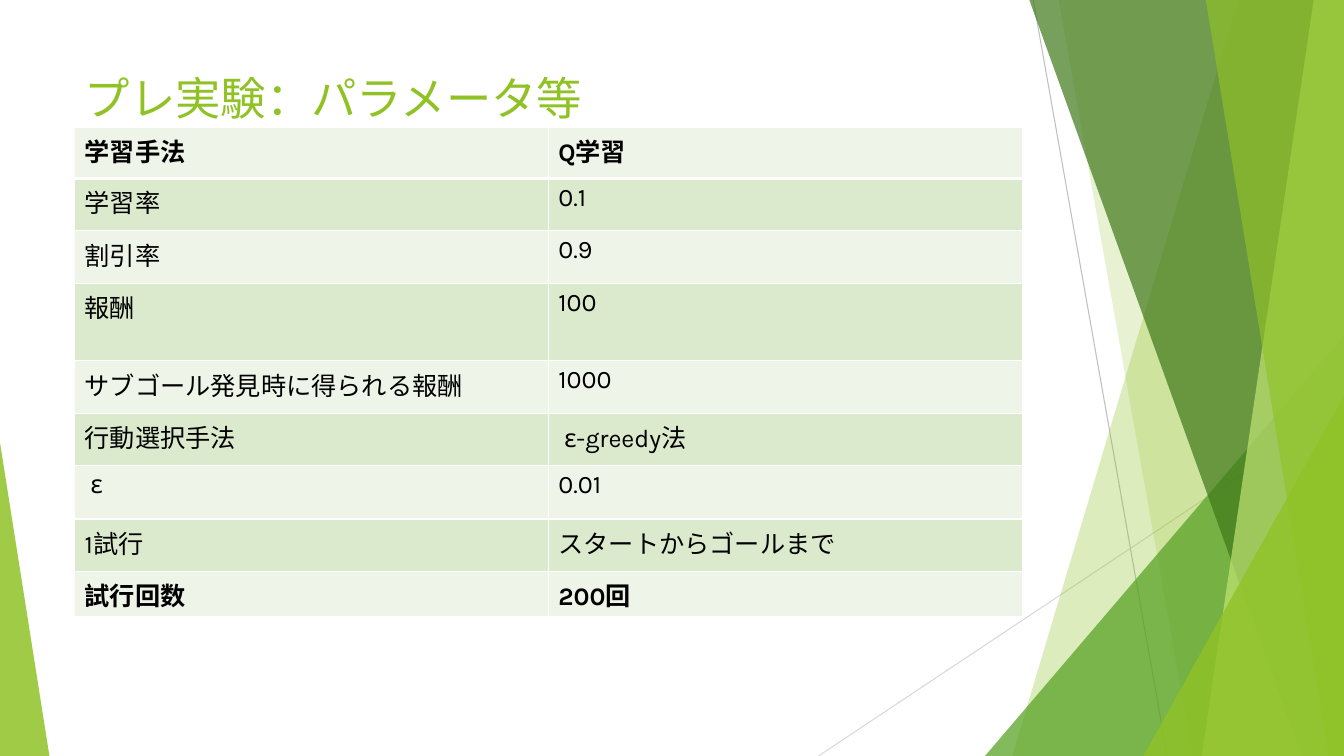
import pptx
import pptx.util
import pptx.dml.color
import pptx.enum.shapes
import pptx.enum.text
import pptx.oxml
import pptx.oxml.ns

RGB = pptx.dml.color.RGBColor
LIME = RGB(0x90, 0xC2, 0x26)
PALE_LIME = RGB(0xC0, 0xE4, 0x74)
GREEN = RGB(0x54, 0xA0, 0x21)
DARK_GREEN = RGB(0x3F, 0x78, 0x19)
GREY = RGB(0xBF, 0xBF, 0xBF)
LIGHT_GREY = RGB(0xD9, 0xD9, 0xD9)
BLACK = RGB(0, 0, 0)
ROW_FILLS = [RGB(0xEE, 0xF4, 0xE8), RGB(0xDB, 0xE9, 0xCD)]
FONT = "Karla"
NS = pptx.oxml.ns.nsdecls("a")
Pt = pptx.util.Pt

prs = pptx.Presentation()
prs.slide_width = pptx.util.Inches(13.33)
prs.slide_height = pptx.util.Inches(7.5)
s = prs.slides.add_slide(prs.slide_layouts[5])


# The slide is a grid of 100 columns by 100 rows
def grid(*cells):
    sizes = (prs.slide_width, prs.slide_height)
    return [int(sizes[i % 2] * c / 100) for i, c in enumerate(cells)]


def write(p, text, size, color, bold=False):
    r = p.add_run()
    r.text = text
    r.font.name = FONT
    r.font.size = Pt(size)
    r.font.bold = bold
    r.font.color.rgb = color


# Thin crossing lines
for ends, color in [((76.88, 0, 86.85, 100), GREY),
                    ((100, 53.73, 60.9, 100), LIGHT_GREY)]:
    line = s.shapes.add_connector(
        pptx.enum.shapes.MSO_CONNECTOR.STRAIGHT, *grid(*ends))
    line.line.color.rgb = color
    line.line.width = Pt(0.75)
    line._element.spPr.append(pptx.oxml.parse_xml(f"<a:effectLst {NS}/>"))

# Translucent facets, back to front. A band runs from its top column to its
# bottom column and out to the right edge; a triangle has a box and an apex.
facets = [
    ("band", (92.12, 75.32), LIME, 30),
    ("band", (78.77, 88.75), LIME, 20),
    ("triangle", (73.29, 44.4, 26.71, 55.6, 1), GREEN, 72),
    ("band", (76.59, 96.85), DARK_GREEN, 70),
    ("band", (97.75, 89.42), PALE_LIME, 70),
    ("band", (89.72, 98.87), LIME, 65),
    ("triangle", (85.07, 52.4, 14.93, 47.6, 1), LIME, 80),
    ("triangle", (0, 58.53, 3.68, 41.47, 0), LIME, 85),
]
for kind, place, color, opacity in facets:
    if kind == "band":
        top, bottom = place
        outline = s.shapes.build_freeform(*grid(top, 0))
        outline.add_line_segments(
            [grid(100, 0), grid(100, 100), grid(bottom, 100)], close=True)
        sp = outline.convert_to_shape()
    else:
        sp = s.shapes.add_shape(
            pptx.enum.shapes.MSO_SHAPE.ISOSCELES_TRIANGLE, *grid(*place[:4]))
        sp.adjustments[0] = place[4]
    sp.shadow.inherit = False
    sp.line.fill.background()
    sp.fill.solid()
    sp.fill.fore_color.rgb = color
    tint = sp._element.spPr.find(".//" + pptx.oxml.ns.qn("a:srgbClr"))
    tint.append(pptx.oxml.parse_xml(f'<a:alpha {NS} val="{opacity * 1000}"/>'))

# Title
title = s.shapes.title
title.left, title.top, title.width, title.height = grid(5.55, 8.93, 70.5, 7.87)
tf = title.text_frame
tf.word_wrap = True
tf.auto_size = pptx.enum.text.MSO_AUTO_SIZE.NONE
tf.vertical_anchor = pptx.enum.text.MSO_ANCHOR.MIDDLE
tf.paragraphs[0].alignment = pptx.enum.text.PP_ALIGN.LEFT
write(tf.paragraphs[0], "プレ実験：パラメータ等", 32.4, LIME)

# Parameter table and trial-count table: top row, then (height, label, value)
parameters = [
    (6.8, "学習手法", "Q学習"),
    (6.93, "学習率", "0.1"),
    (6.93, "割引率", "0.9"),
    (10.27, "報酬", "100"),
    (6.93, "サブゴール発見時に得られる報酬", "1000"),
    (6.93, "行動選択手法", " ε-greedy法"),
    (7.07, " ε", "0.01"),
    (6.93, "1試行", "スタートからゴールまで"),
]
trials = [(5.47, "試行回数", "200回")]

for top, rows in [(16.8, parameters), (75.6, trials)]:
    total = sum(row[0] for row in rows)
    table = s.shapes.add_table(
        len(rows), 2, *grid(5.55, top, 70.5, total)).table
    for i, (height, *texts) in enumerate(rows):
        table.rows[i].height = grid(0, height)[1]
        for j, text in enumerate(texts):
            cell = table.cell(i, j)
            cell.fill.solid()
            cell.fill.fore_color.rgb = ROW_FILLS[i % 2]
            write(cell.text_frame.paragraphs[0], text, 18, BLACK, bold=i == 0)
            # White borders, thick under the header row
            widths = {"L": 1, "R": 1, "T": 3 if i == 1 else 1,
                      "B": 3 if i == 0 else 1}
            tcPr = cell._tc.get_or_add_tcPr()
            for k, (side, width) in enumerate(widths.items()):
                tcPr.insert(k, pptx.oxml.parse_xml(
                    f'<a:ln{side} {NS} w="{Pt(width)}"><a:solidFill>'
                    f'<a:srgbClr val="FFFFFF"/></a:solidFill></a:ln{side}>'))

prs.save("out.pptx")
